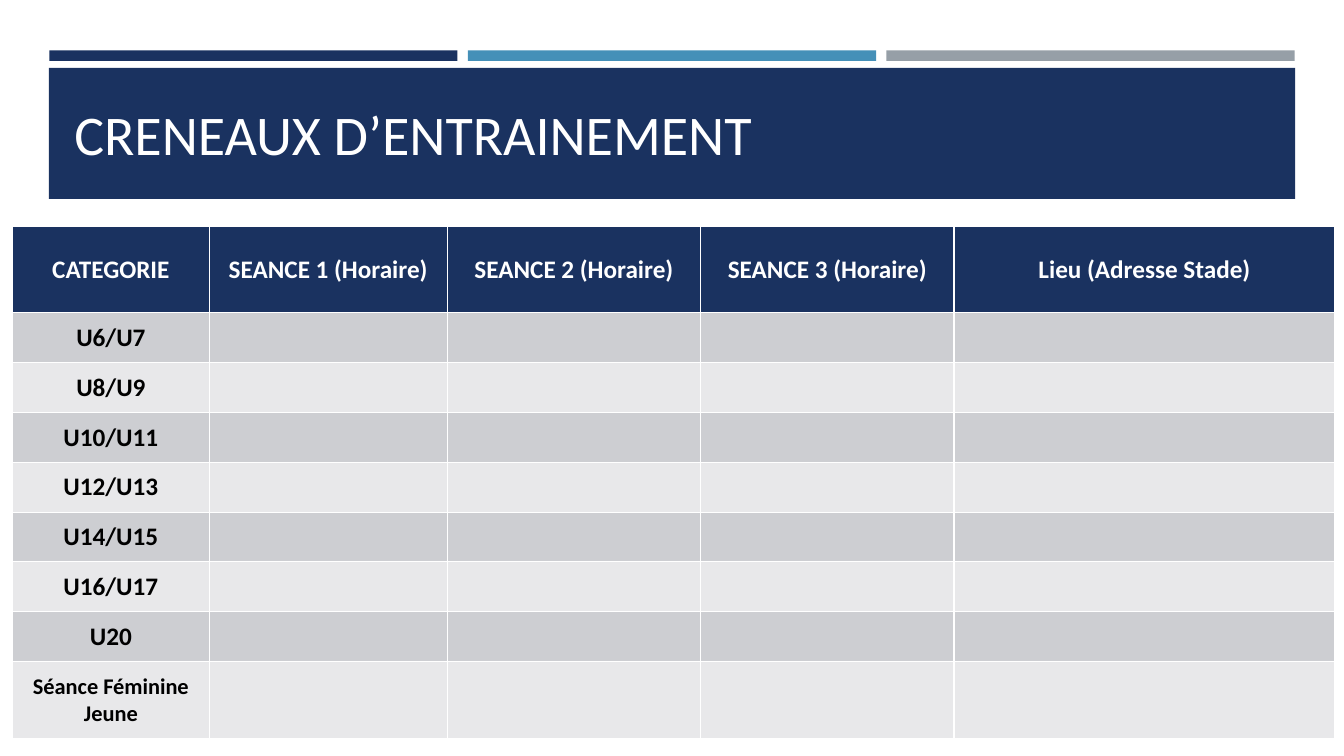
from pptx import Presentation
from pptx.util import Pt
from pptx.dml.color import RGBColor
from pptx.enum.shapes import MSO_SHAPE as Shape
from pptx.enum.text import MSO_ANCHOR as Anchor, PP_ALIGN as Align

NAVY = RGBColor(0x1A, 0x32, 0x60)
BLUE = RGBColor(0x45, 0x90, 0xB8)
GREY = RGBColor(0x96, 0x9F, 0xA7)
DARK = RGBColor(0xCD, 0xCE, 0xD2)
LIGHT = RGBColor(0xE8, 0xE8, 0xEA)
WHITE = RGBColor(0xFF, 0xFF, 0xFF)
BLACK = RGBColor(0x00, 0x00, 0x00)
FONT = "Calibri"

HEADS = ["CATEGORIE", "SEANCE 1 (Horaire)", "SEANCE 2 (Horaire)",
         "SEANCE 3 (Horaire)", "Lieu (Adresse Stade)"]
GROUPS = ["U6/U7", "U8/U9", "U10/U11", "U12/U13", "U14/U15", "U16/U17",
          "U20", "Séance Féminine Jeune"]
WIDTHS = [140.4, 170.1, 181, 181, 272.1]
HEIGHTS = [61.9] + [35.6] * 7 + [55.4]


def add_bar(slide, left, top, width, height, color):
    bar = slide.shapes.add_shape(
        Shape.RECTANGLE, Pt(left), Pt(top), Pt(width), Pt(height))
    bar.shadow.inherit = False
    bar.fill.solid()
    bar.fill.fore_color.rgb = color
    bar.line.fill.background()


def set_text(frame, text, size, color, bold=False, align=Align.LEFT):
    frame.text = text
    para = frame.paragraphs[0]
    para.alignment = align
    font = para.runs[0].font
    font.name, font.size, font.bold = FONT, Pt(size), bold
    font.color.rgb = color


def add_title(slide, text):
    box = slide.shapes.add_textbox(Pt(46), Pt(55.4), Pt(868.3), Pt(80))
    frame = box.text_frame
    frame.word_wrap = True
    frame.vertical_anchor = Anchor.MIDDLE
    set_text(frame, text, 40, WHITE)


def fill_cell(cell, color):
    cell.fill.solid()
    cell.fill.fore_color.rgb = color
    cell.vertical_anchor = Anchor.MIDDLE


def add_grid(slide):
    # The default table style draws the white cell borders
    grid = slide.shapes.add_table(
        len(HEIGHTS), len(WIDTHS), Pt(9), Pt(161.6),
        Pt(sum(WIDTHS)), Pt(sum(HEIGHTS))).table
    for col, width in zip(grid.columns, WIDTHS):
        col.width = Pt(width)
    for row, height in zip(grid.rows, HEIGHTS):
        row.height = Pt(height)

    # Header row
    for cell, head in zip(grid.rows[0].cells, HEADS):
        fill_cell(cell, NAVY)
        set_text(cell.text_frame, head, 18, WHITE, True, Align.CENTER)

    # One banded row for each age group
    for num, group in enumerate(GROUPS, 1):
        for cell in grid.rows[num].cells:
            fill_cell(cell, DARK if num % 2 else LIGHT)
        size = 16 if group == GROUPS[-1] else 18
        set_text(grid.cell(num, 0).text_frame, group, size, BLACK,
                 True, Align.CENTER)


def main():
    deck = Presentation()
    deck.slide_width, deck.slide_height = Pt(960), Pt(540)
    slide = deck.slides.add_slide(deck.slide_layouts[6])

    # Three accent bars above the title band
    for num, color in enumerate([NAVY, BLUE, GREY]):
        add_bar(slide, 35.2 + num * 299, 36, 291.6, 7.6, color)
    add_bar(slide, 34.9, 48.5, 890.3, 93.6, NAVY)
    add_title(slide, "CRENEAUX D’ENTRAINEMENT")

    # Training schedule
    add_grid(slide)
    deck.save("out.pptx")


if __name__ == "__main__":
    main()
